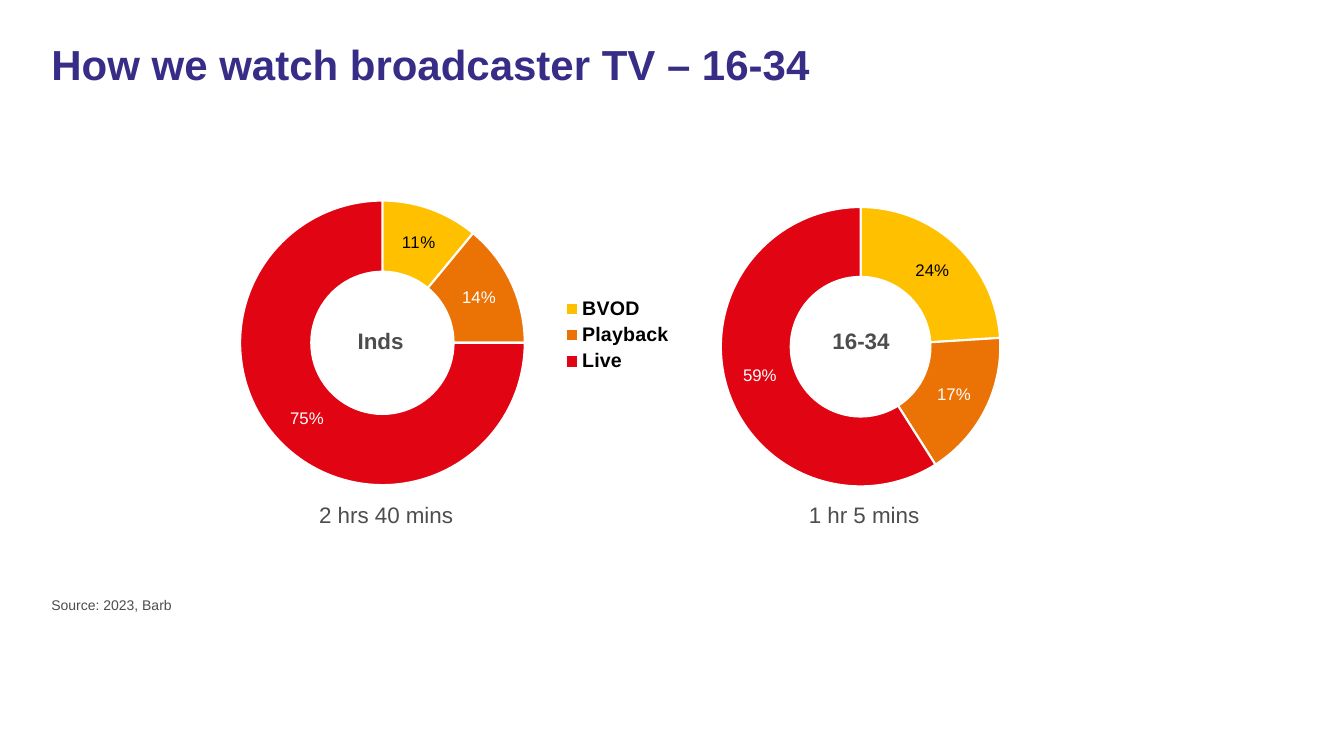
import pptx
import pptx.chart.data
import pptx.dml.color
import pptx.enum.chart
import pptx.enum.text
import pptx.oxml
import pptx.oxml.ns
import pptx.util

Inches = pptx.util.Inches
Pt = pptx.util.Pt
qn = pptx.oxml.ns.qn
Align = pptx.enum.text.PP_ALIGN
Anchor = pptx.enum.text.MSO_ANCHOR


class Theme:
    face = "Arial"
    title, text = "372D87", "4D4D4D"
    black, white = "000000", "FFFFFF"
    slices = ("FFC000", "EB7305", "E10514")
    head, body, legend, label, note = 30, 16, 14, 12, 10


def rgb(code):
    return pptx.dml.color.RGBColor.from_string(code)


def style(font, size, color, bold=False):
    font.name = Theme.face
    font.size = Pt(size)
    font.bold = bold
    font.color.rgb = rgb(color)


def place(shape, box):
    shape.left, shape.top, shape.width, shape.height = map(Inches, box)


def write(shape, text, size=Theme.body, color=Theme.text, bold=False,
          align=Align.LEFT, line=1.0):
    frame = shape.text_frame
    frame.word_wrap = True
    frame.vertical_anchor = Anchor.TOP
    para = frame.paragraphs[0]
    para.alignment = align
    para.line_spacing = line
    para.space_before = Pt(0)
    run = para.add_run()
    run.text = text
    style(run.font, size, color, bold)


def caption(slide, text, box, bold=False):
    shape = slide.shapes.add_textbox(*map(Inches, box))
    write(shape, text, bold=bold, align=Align.CENTER)
    shape.text_frame.auto_size = pptx.enum.text.MSO_AUTO_SIZE.SHAPE_TO_FIT_TEXT


def set_plot(chart, plot):
    """Fix the inner plot area, given as fractions of the chart."""
    area = chart._chartSpace.find(".//" + qn("c:plotArea"))
    for old in area.findall(qn("c:layout")):
        area.remove(old)
    parts = '<c:layoutTarget val="inner"/><c:xMode val="edge"/><c:yMode val="edge"/>'
    parts += "".join(f'<c:{key} val="{val}"/>' for key, val in zip("xywh", plot))
    area.insert(0, pptx.oxml.parse_xml(
        f'<c:layout {pptx.oxml.ns.nsdecls("c")}>'
        f"<c:manualLayout>{parts}</c:manualLayout></c:layout>"))


def set_labels(chart):
    """Show percentages in white, with the first one in black."""
    series = chart.plots[0].series[0]
    labels = series.data_labels
    labels.show_value = False
    labels.show_percentage = True
    labels.number_format = "0%"
    labels.number_format_is_linked = False
    style(labels.font, Theme.label, Theme.white)
    style(series.points[0].data_label.font, Theme.label, Theme.black)
    first = chart._chartSpace.find(".//" + qn("c:dLbl"))
    first.find(qn("c:showVal")).set("val", "0")
    first.find(qn("c:showPercent")).set("val", "1")
    first.insert(1, pptx.oxml.parse_xml(
        f'<c:numFmt {pptx.oxml.ns.nsdecls("c")} formatCode="0%" sourceLinked="0"/>'))


def add_ring(slide, names, values, box, plot, legend=False):
    data = pptx.chart.data.CategoryChartData()
    data.categories = names
    data.add_series("Series 1", values)
    chart = slide.shapes.add_chart(
        pptx.enum.chart.XL_CHART_TYPE.DOUGHNUT, *map(Inches, box), data).chart
    style(chart.font, Theme.note, Theme.black)
    chart.has_title = False
    chart.has_legend = legend
    if legend:
        chart.legend.position = pptx.enum.chart.XL_LEGEND_POSITION.RIGHT
        chart.legend.include_in_layout = False
        style(chart.legend.font, Theme.legend, Theme.black, bold=True)
    chart.plots[0].vary_by_categories = True
    series = chart.plots[0].series[0]
    for spot, color in enumerate(Theme.slices):
        form = series.points[spot].format
        form.fill.solid()
        form.fill.fore_color.rgb = rgb(color)
        form.line.color.rgb = rgb(Theme.white)
        form.line.width = Pt(1.5)
    set_labels(chart)
    set_plot(chart, plot)


def add_source(shape, text):
    place(shape, (0.41, 5.87, 12.4, 0.33))
    props = shape.text_frame.paragraphs[0]._p.get_or_add_pPr()
    props.set("marL", "0")
    props.set("indent", "0")
    props.append(pptx.oxml.parse_xml(f'<a:buNone {pptx.oxml.ns.nsdecls("a")}/>'))
    write(shape, text, size=Theme.note)


def main():
    deck = pptx.Presentation()
    deck.slide_width, deck.slide_height = Inches(13.33), Inches(7.5)
    slide = deck.slides.add_slide(deck.slide_layouts[1])

    title = slide.shapes.title
    place(title, (0.41, 0.39, 12.4, 1.12))
    write(title, "How we watch broadcaster TV – 16-34", size=Theme.head,
          color=Theme.title, bold=True, line=0.9)
    add_source(slide.placeholders[1], "Source: 2023, Barb")

    names = ("BVOD", "Playback", "Live")
    add_ring(slide, names, (11, 14, 75), (2.15, 1.4, 4.63, 3.85),
             (0.05, 0.13, 0.61, 0.78), legend=True)
    add_ring(slide, ("1", "2", "3"), (24, 17, 59), (6.88, 1.4, 4.87, 3.85),
             (0.05, 0.17, 0.58, 0.72))

    caption(slide, "2 hrs 40 mins", (2.96, 4.92, 1.74, 0.37))
    caption(slide, "1 hr 5 mins", (7.7, 4.92, 1.74, 0.37))
    caption(slide, "Inds", (3.24, 3.2, 1.07, 0.37), bold=True)
    caption(slide, "16-34", (8.07, 3.2, 0.94, 0.37), bold=True)
    deck.save("out.pptx")


if __name__ == "__main__":
    main()
